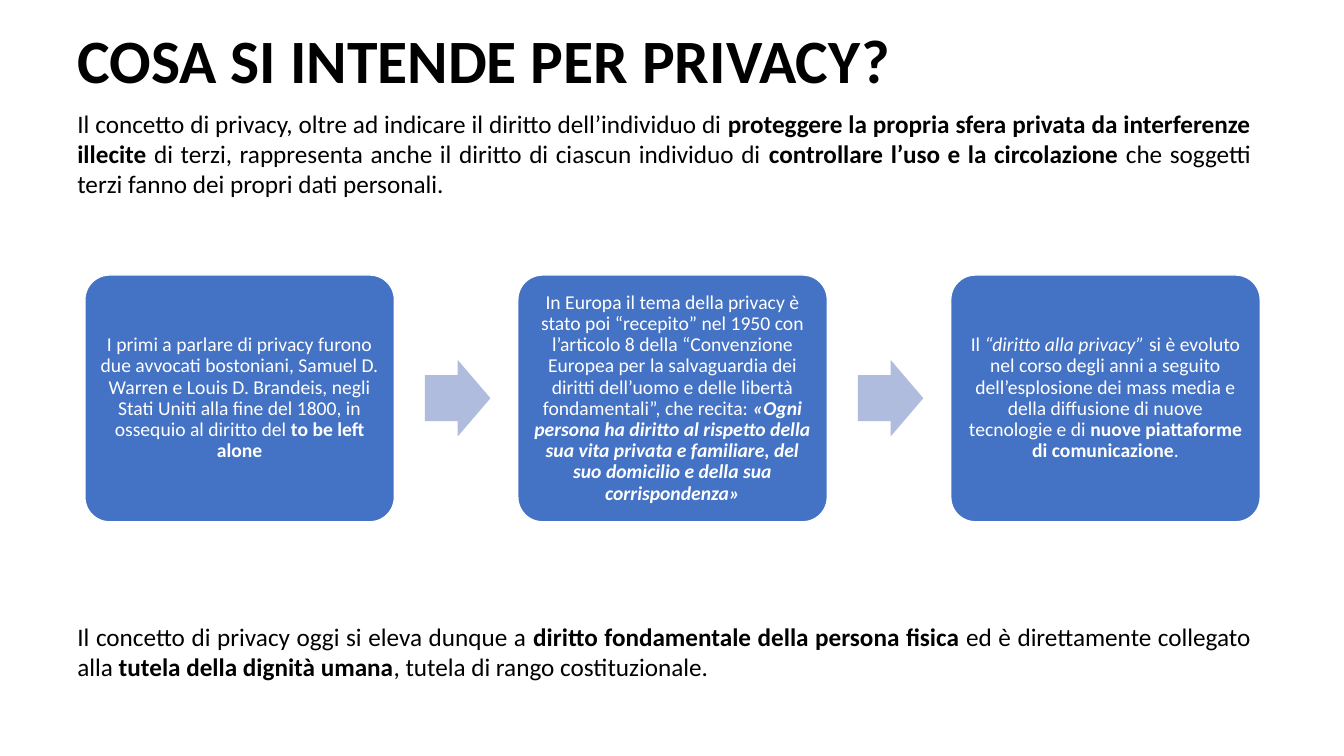
"""Build the slide on the meaning of privacy."""
from pptx import Presentation
from pptx.dml.color import RGBColor
from pptx.enum.shapes import MSO_SHAPE as Shape
from pptx.enum.text import MSO_ANCHOR as Anchor, PP_ALIGN as Align
from pptx.util import Cm, Pt

COLORS = {"ink": "000000", "card": "4472C4", "arrow": "B0BCDE", "white": "FFFFFF"}


def color(name):
    return RGBColor.from_string(COLORS[name])


def write(shape, runs, size=18, ink="ink", align=Align.JUSTIFY,
          anchor=Anchor.TOP, inset=None, spacing=None):
    frame = shape.text_frame
    frame.word_wrap = True
    frame.vertical_anchor = anchor
    if inset is not None:
        frame.margin_left = frame.margin_right = Cm(inset)
        frame.margin_top = frame.margin_bottom = Cm(inset)
    para = frame.paragraphs[0]
    para.alignment = align
    para.line_spacing = spacing
    for text, style in runs:
        run = para.add_run()
        run.text = text
        font = run.font
        font.name, font.size = "Calibri", Pt(size)
        font.bold, font.italic = "b" in style, "i" in style
        font.color.rgb = color(ink)


deck = Presentation()
deck.slide_width, deck.slide_height = Cm(33.87), Cm(19.05)
slide = deck.slides.add_slide(deck.slide_layouts[6])
shapes = slide.shapes

LEFT, WIDTH = Cm(1.7), Cm(30.07)
title = shapes.add_textbox(LEFT, Cm(0), WIDTH, Cm(3.18))
write(title, [("COSA SI INTENDE PER PRIVACY?", "b")], size=44,
      align=Align.LEFT, anchor=Anchor.MIDDLE, spacing=0.9)

intro = [
    ("Il concetto di privacy, oltre ad indicare il diritto dell’individuo di ", ""),
    ("proteggere la propria sfera privata da interferenze illecite ", "b"),
    ("di terzi, rappresenta anche il diritto di ciascun individuo di ", ""),
    ("controllare l’uso e la circolazione", "b"),
    (" che soggetti terzi fanno dei propri dati personali.", ""),
]
close = [
    ("Il concetto di privacy oggi si eleva dunque a ", ""),
    ("diritto fondamentale della persona fisica ", "b"),
    ("ed è direttamente collegato alla ", ""),
    ("tutela della dignità umana", "b"),
    (", tutela di rango costituzionale.", ""),
]
for top, height, runs in [(2.6, 2.56, intro), (15.52, 1.8, close)]:
    write(shapes.add_textbox(LEFT, Cm(top), WIDTH, Cm(height)), runs)

steps = [
    [("I primi a parlare di privacy furono due avvocati bostoniani, Samuel D. "
      "Warren e Louis D. Brandeis, negli Stati Uniti alla fine del 1800, in "
      "ossequio al diritto del ", ""),
     ("to be left alone", "b")],
    [("In Europa il tema della privacy è stato poi “recepito” nel 1950 con "
      "l’articolo 8 della “Convenzione Europea per la salvaguardia dei diritti "
      "dell’uomo e delle libertà fondamentali”, che recita: ", ""),
     ("«Ogni persona ha diritto al rispetto della sua vita privata e familiare, "
      "del suo domicilio e della sua corrispondenza»", "bi")],
    [("Il ", ""),
     ("“diritto alla privacy” ", "i"),
     ("si è evoluto nel corso degli anni a seguito dell’esplosione dei mass "
      "media e della diffusione di nuove tecnologie e di ", ""),
     ("nuove piattaforme di comunicazione", "b"),
     (".", "")],
]
START, PITCH = 2.14, 10.91
for index, runs in enumerate(steps):
    left = START + index * PITCH
    card = shapes.add_shape(Shape.ROUNDED_RECTANGLE,
                            Cm(left), Cm(6.93), Cm(7.8), Cm(6.22))
    card.adjustments[0] = 0.1
    card.shadow.inherit = False
    card.fill.solid()
    card.fill.fore_color.rgb = color("card")
    card.line.color.rgb = color("white")
    card.line.width = Pt(1)
    write(card, runs, size=14, ink="white", align=Align.CENTER,
          anchor=Anchor.MIDDLE, inset=0.15, spacing=0.9)
    if index < len(steps) - 1:
        arrow = shapes.add_shape(Shape.RIGHT_ARROW,
                                 Cm(left + 8.57), Cm(9.07), Cm(1.65), Cm(1.93))
        arrow.adjustments[0] = 0.6
        arrow.adjustments[1] = 0.5
        arrow.shadow.inherit = False
        arrow.fill.solid()
        arrow.fill.fore_color.rgb = color("arrow")
        arrow.line.fill.background()

deck.save("out.pptx")
